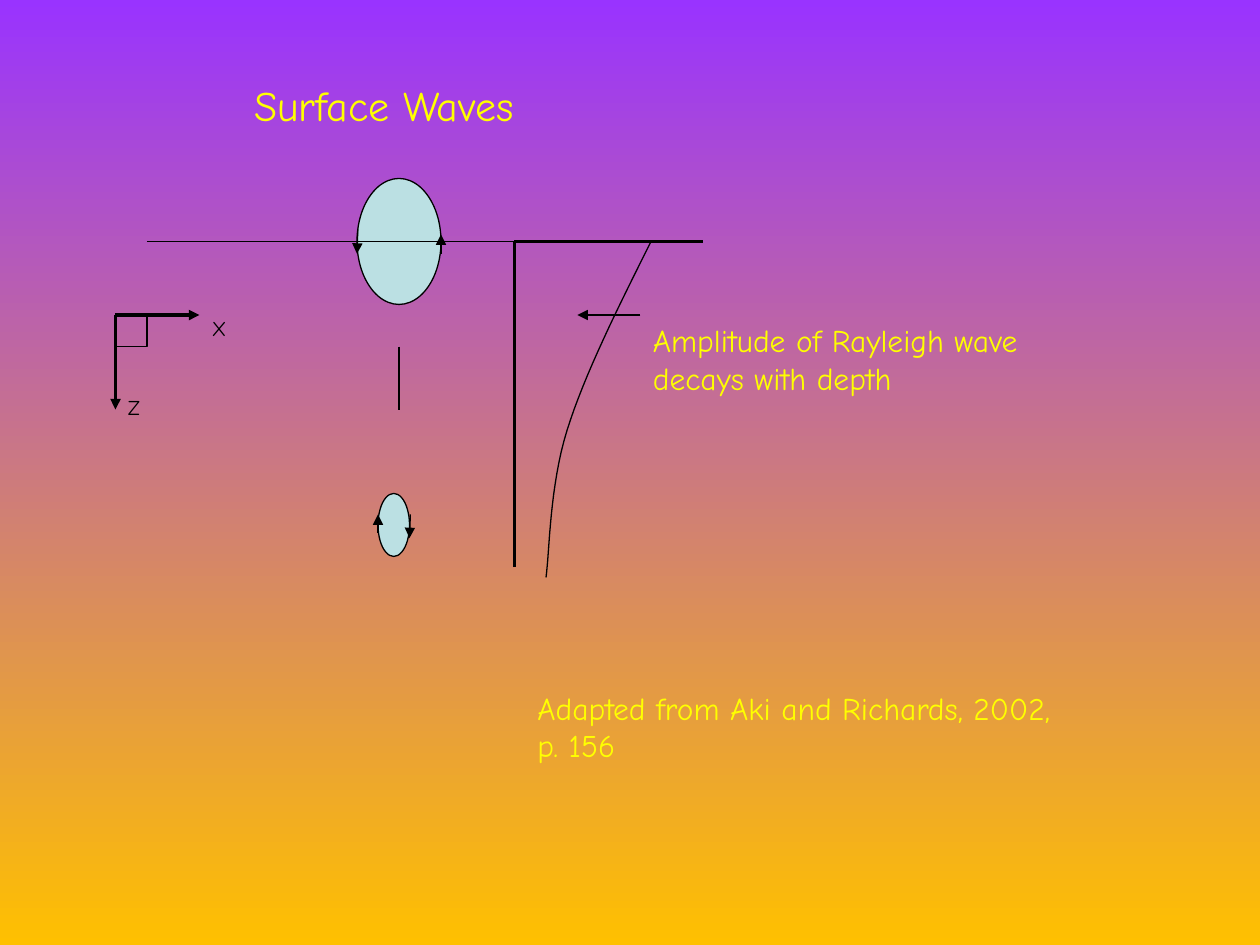
import pptx
import pptx.util
import pptx.dml.color
import pptx.enum.shapes
import pptx.enum.text
import pptx.oxml
import pptx.oxml.ns
from lxml import etree

Pt = pptx.util.Pt
SHAPE = pptx.enum.shapes.MSO_SHAPE
BLACK, YELLOW, PALE_BLUE = "000000", "FFFF00", "BBE0E3"


def color(hex_string):
    return pptx.dml.color.RGBColor.from_string(hex_string)


def write(box, text, size=18, ink=YELLOW, wrap=True):
    """Fill a box with one paragraph for each line of the text."""
    frame = box.text_frame
    frame.text = text
    frame.word_wrap = wrap
    frame.auto_size = pptx.enum.text.MSO_AUTO_SIZE.SHAPE_TO_FIT_TEXT
    frame.vertical_anchor = pptx.enum.text.MSO_ANCHOR.TOP
    for para in frame.paragraphs:
        para.alignment = pptx.enum.text.PP_ALIGN.LEFT
        para.space_before = Pt(0)
        for span in para.runs:
            span.font.name = "Comic Neue"
            span.font.size = Pt(size)
            span.font.color.rgb = color(ink)


deck = pptx.Presentation()
deck.slide_width, deck.slide_height = Pt(720), Pt(540)
page = deck.slides.add_slide(deck.slide_layouts[5])

# Background: violet at the top to amber at the bottom
sky = page.background.fill
sky.gradient()
sky.gradient_angle = 270
for stop, (position, tint) in zip(sky.gradient_stops, [(0, "9933FF"), (1, "FFC000")]):
    stop.position = position
    stop.color.rgb = color(tint)

title = page.shapes.title
title.left, title.top, title.width, title.height = Pt(138), Pt(42), Pt(390), Pt(36)
write(title, "Surface Waves", size=24)

# Particle orbits at the surface and at depth, and the right angle of the axes
for kind, left, top, width, height, fill in [
    (SHAPE.OVAL, 204, 102, 48, 72, PALE_BLUE),
    (SHAPE.OVAL, 216, 282, 18, 36, PALE_BLUE),
    (SHAPE.RECTANGLE, 66, 180, 18, 18, None),
]:
    outline = page.shapes.add_shape(kind, Pt(left), Pt(top), Pt(width), Pt(height))
    outline.shadow.inherit = False
    outline.line.color.rgb = color(BLACK)
    outline.line.width = Pt(0.75)
    if fill:
        outline.fill.solid()
        outline.fill.fore_color.rgb = color(fill)
    else:
        outline.fill.background()

# Straight lines: start x, start y, end x, end y, width, arrowhead
for x1, y1, x2, y2, width, arrow in [
    (228, 198, 228, 234, 0.75, False),      # between the orbits
    (66, 180, 66, 234, 2, True),            # z axis
    (66, 180, 114, 180, 2, True),           # x axis
    (84, 138, 402, 138, 0.75, False),       # ground surface
    (204.5, 131, 204, 145, 0.75, True),     # surface orbit, left
    (252, 145, 252, 134, 0.75, True),       # surface orbit, right
    (216, 304.5, 216, 294, 0.75, True),     # deep orbit, left
    (234.5, 294, 234, 307.5, 0.75, True),   # deep orbit, right
    (366, 180, 330, 180, 0.75, True),       # pointer to the decay curve
    (294, 324, 294, 138, 2, False),         # depth axis
    (294, 138, 402, 138, 2, False),         # amplitude axis
]:
    line = page.shapes.add_connector(
        pptx.enum.shapes.MSO_CONNECTOR.STRAIGHT, Pt(x1), Pt(y1), Pt(x2), Pt(y2))
    line.line.color.rgb = color(BLACK)
    line.line.width = Pt(width)
    if arrow:
        stroke = line.line._get_or_add_ln()
        etree.SubElement(stroke, pptx.oxml.ns.qn("a:tailEnd"), type="triangle")
    etree.SubElement(line._element.spPr, pptx.oxml.ns.qn("a:effectLst"))

# Amplitude decay: two Bézier arcs, sampled evenly
arcs = [
    [(372, 138), (353, 176), (334, 214), (324, 246)],
    [(324, 246), (314, 278), (314, 316), (312, 330)],
]
steps = 16
curve_points = []
for arc in arcs:
    for step in range(1, steps + 1):
        t = step / steps
        weights = [(1 - t) ** 3, 3 * t * (1 - t) ** 2, 3 * t ** 2 * (1 - t), t ** 3]
        curve_points.append(tuple(
            Pt(sum(weight * point[axis] for weight, point in zip(weights, arc)))
            for axis in (0, 1)))
builder = page.shapes.build_freeform(Pt(372), Pt(138))
builder.add_line_segments(curve_points, close=False)
decay = builder.convert_to_shape()
decay.shadow.inherit = False
decay.fill.background()
decay.line.color.rgb = color(BLACK)
decay.line.width = Pt(0.75)

# Labels
for text, left, top, width, height, style in [
    ("X", 114, 176.5, 23, 21.5, {"size": 12, "ink": BLACK, "wrap": False}),
    ("Z", 66, 222, 42, 21.5, {"size": 12, "ink": BLACK}),
    ("Amplitude of Rayleigh wave\ndecays with depth", 366, 180, 244, 50.5, {"wrap": False}),
    ("Adapted from Aki and Richards, 2002, p. 156", 300, 390, 312, 50.5, {}),
]:
    label = page.shapes.add_textbox(Pt(left), Pt(top), Pt(width), Pt(height))
    write(label, text, **style)

deck.save("out.pptx")
